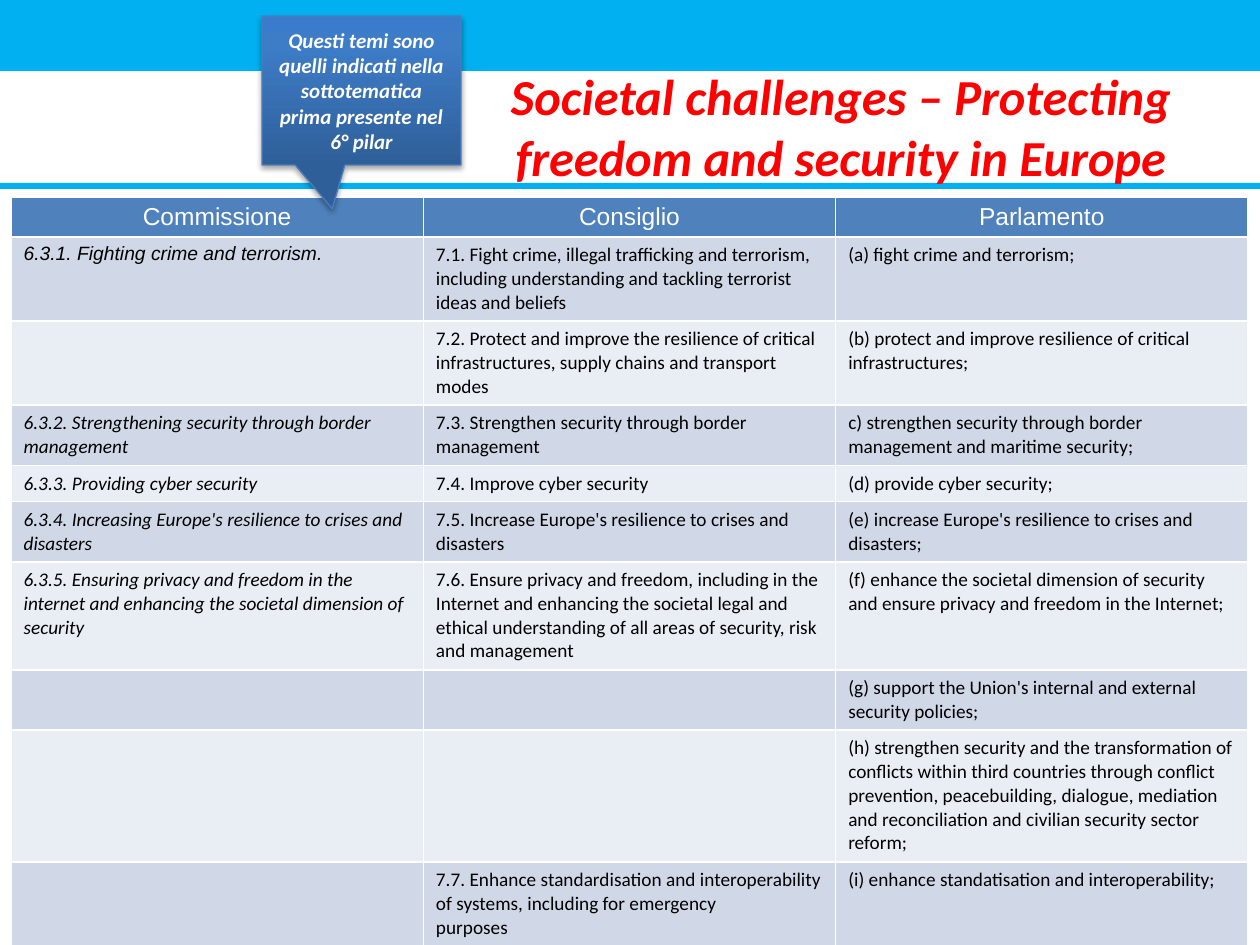
import copy

import pptx
import pptx.dml.color
import pptx.enum.shapes
import pptx.enum.text
import pptx.oxml
import pptx.oxml.ns
import pptx.util

SHAPE = pptx.enum.shapes.MSO_SHAPE
ALIGN = pptx.enum.text.PP_ALIGN
ANCHOR = pptx.enum.text.MSO_ANCHOR


class Theme:
    band, red, white, black = "00B0F0", "FF0000", "FFFFFF", "000000"
    header, rows = "4F81BD", ("D0D8E8", "E9EDF4")
    callout_line = "4B7EBC"
    callout_stops = ((0, "2F5F99"), (0.8, "3D7CC7"), (1, "3A7CCB"))
    title = dict(name="Calibri", size=28.8, color=red, bold=True, italic=True)
    callout = dict(name="Calibri", size=12, color=white, bold=True, italic=True)
    heading = dict(name="Arial", size=14, color=white, bold=False, italic=False)
    body = dict(name="Calibri", size=11, color=black, bold=False, italic=False)


TITLE = "Societal challenges – Protecting freedom and security in Europe"
CALLOUT = "Questi temi sono quelli indicati nella sottotematica prima presente nel 6° pilar"
HEADINGS = ("Commissione", "Consiglio", "Parlamento")
HEADING_HEIGHT = 39
# Row height in px, then the text of the three columns
TOPICS = (
    (84, "6.3.1. Fighting crime and terrorism.",
     "7.1. Fight crime, illegal trafficking and terrorism, including understanding "
     "and tackling terrorist ideas and beliefs",
     "(a) fight crime and terrorism;"),
    (84, "",
     "7.2. Protect and improve the resilience of critical infrastructures, "
     "supply chains and transport modes",
     "(b) protect and improve resilience of critical infrastructures;"),
    (60, "6.3.2. Strengthening security through border management",
     "7.3. Strengthen security through border management",
     "c) strengthen security through border management and maritime security;"),
    (36, "6.3.3. Providing cyber security",
     "7.4. Improve cyber security",
     "(d) provide cyber security;"),
    (60, "6.3.4. Increasing Europe's resilience to crises and disasters",
     "7.5. Increase Europe's resilience to crises and disasters",
     "(e) increase Europe's resilience to crises and disasters;"),
    (108, "6.3.5. Ensuring privacy and freedom in the internet and enhancing "
     "the societal dimension of security",
     "7.6. Ensure privacy and freedom, including in the Internet and enhancing the "
     "societal legal and ethical understanding of all areas of security, risk and management",
     "(f) enhance the societal dimension of security and ensure privacy and freedom "
     "in the Internet;"),
    (60, "", "",
     "(g) support the Union's internal and external security policies;"),
    (132, "", "",
     "(h) strengthen security and the transformation of conflicts within third countries "
     "through conflict prevention, peacebuilding, dialogue, mediation and reconciliation "
     "and civilian security sector reform;"),
    (83, "",
     "7.7. Enhance standardisation and interoperability of systems, "
     "including for emergency\npurposes",
     "(i) enhance standatisation and interoperability;"),
)


def px(length):
    return round(length * 914400 / 126)


def rgb(value):
    return pptx.dml.color.RGBColor.from_string(value)


def write(frame, text, look, align=ALIGN.LEFT):
    """Fill a text frame, one paragraph for each line of text."""
    frame.text = text
    for para in frame.paragraphs:
        para.alignment = align
        for target in (para, *para.runs):
            for key, value in look.items():
                if key == "color":
                    target.font.color.rgb = rgb(value)
                else:
                    setattr(target.font, key, pptx.util.Pt(value) if key == "size" else value)


def add_band(page, top, height):
    band = page.shapes.add_shape(SHAPE.RECTANGLE, 0, px(top), px(1260), px(height))
    band.shadow.inherit = False
    band.fill.solid()
    band.fill.fore_color.rgb = rgb(Theme.band)
    band.line.fill.background()
    return band


def place_title(page, behind):
    """Set the title and bring it in front of the given shape."""
    title = page.shapes.title
    title.left, title.top, title.width, title.height = map(px, (432, 76, 818, 100))
    frame = title.text_frame
    frame.auto_size = pptx.enum.text.MSO_AUTO_SIZE.NONE
    frame.vertical_anchor = ANCHOR.MIDDLE
    write(frame, TITLE, Theme.title, ALIGN.CENTER)
    behind.element.addnext(title.element)


def fill_cell(cell, text, color, look, align=ALIGN.LEFT, anchor=ANCHOR.TOP):
    cell.fill.solid()
    cell.fill.fore_color.rgb = rgb(color)
    cell.vertical_anchor = anchor
    write(cell.text_frame, text, look, align)


def add_topics(page):
    heights = [HEADING_HEIGHT] + [topic[0] for topic in TOPICS]
    table = page.shapes.add_table(len(heights), len(HEADINGS), px(11), px(197),
                                  px(1237), px(sum(heights))).table
    for row, height in zip(table.rows, heights):
        row.height = px(height)
    for column, heading in enumerate(HEADINGS):
        fill_cell(table.cell(0, column), heading, Theme.header, Theme.heading,
                  ALIGN.CENTER, ANCHOR.MIDDLE)
    for index, (_, *texts) in enumerate(TOPICS):
        for column, text in enumerate(texts):
            look = dict(Theme.body, italic=column == 0)
            if (index, column) == (0, 0):
                look["name"] = "Arial"
            fill_cell(table.cell(index + 1, column), text, Theme.rows[index % 2], look)


def add_callout(page):
    callout = page.shapes.add_shape(SHAPE.RECTANGULAR_CALLOUT, *map(px, (262, 16, 199, 149)))
    callout.adjustments[0], callout.adjustments[1] = -0.147, 0.793
    callout.line.color.rgb = rgb(Theme.callout_line)
    callout.line.width = pptx.util.Pt(0.75)
    paint_gradient(callout)
    add_shadow(callout)
    callout.text_frame.word_wrap = True
    callout.text_frame.vertical_anchor = ANCHOR.MIDDLE
    write(callout.text_frame, CALLOUT, Theme.callout, ALIGN.CENTER)


def paint_gradient(shape):
    shape.fill.gradient()
    shape.fill.gradient_angle = 90
    stop_list = shape.element.spPr.find(".//" + pptx.oxml.ns.qn("a:gsLst"))
    stop_list.append(copy.deepcopy(stop_list[-1]))
    for stop, (position, color) in zip(shape.fill.gradient_stops, Theme.callout_stops):
        stop.position = position
        stop.color.rgb = rgb(color)


def add_shadow(shape):
    shape.shadow.inherit = False
    effects = shape.element.spPr.find(pptx.oxml.ns.qn("a:effectLst"))
    effects.append(pptx.oxml.parse_xml(
        f'<a:outerShdw {pptx.oxml.ns.nsdecls("a")} blurRad="{pptx.util.Pt(3.1)}" '
        f'dist="{pptx.util.Pt(1.8)}" dir="5400000" rotWithShape="0">'
        f'<a:srgbClr val="{Theme.black}"><a:alpha val="35000"/></a:srgbClr></a:outerShdw>'))


def main():
    deck = pptx.Presentation()
    deck.slide_width, deck.slide_height = px(1260), px(945)
    page = deck.slides.add_slide(deck.slide_layouts[5])
    add_band(page, 0, 71)
    rule = add_band(page, 183, 6)
    place_title(page, rule)
    add_topics(page)
    add_callout(page)
    deck.save("out.pptx")


if __name__ == "__main__":
    main()
